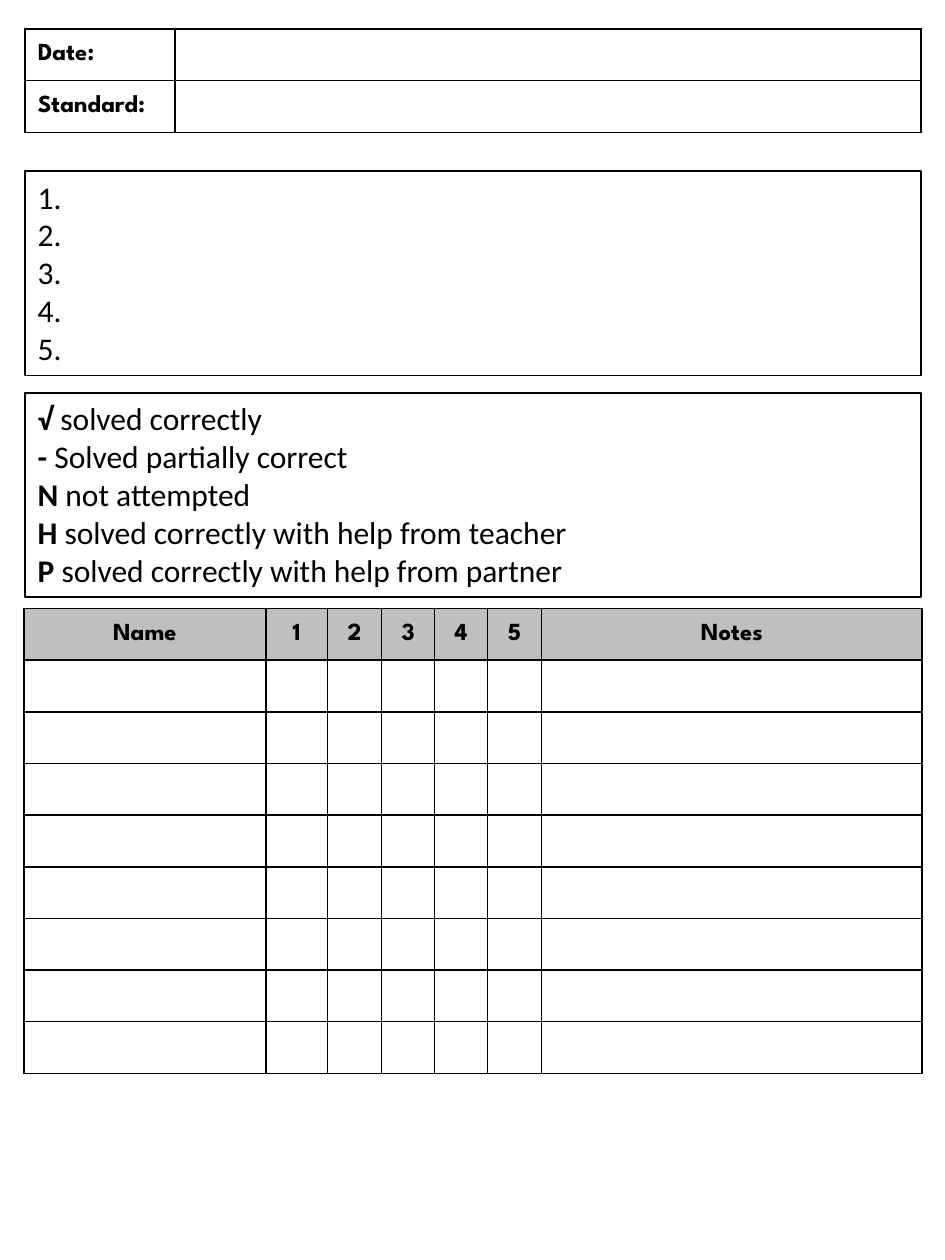
from lxml import etree
from pptx import Presentation
from pptx import util as u
from pptx.dml.color import RGBColor
from pptx.enum import shapes, text
from pptx.oxml import ns

BLACK, WHITE, GREY = "000000", "FFFFFF", "BFBFBF"
HEADING_FONT, BODY_FONT = "League Spartan", "Calibri"
LEFT, WIDTH = 0.2, 7.11
ROW_HEIGHT = 0.41


def color(value):
    return RGBColor.from_string(value)


def add_span(para, words, font, size, bold=False):
    span = para.add_run()
    span.text = words
    span.font.name = font
    span.font.size = u.Pt(size)
    span.font.bold = bold
    span.font.color.rgb = color(BLACK)


def add_borders(cell):
    properties = cell._tc.get_or_add_tcPr()
    for index, side in enumerate(("lnL", "lnR", "lnT", "lnB")):
        line = etree.Element(ns.qn(f"a:{side}"), w=str(u.Pt(1)))
        fill = etree.SubElement(line, ns.qn("a:solidFill"))
        etree.SubElement(fill, ns.qn("a:srgbClr"), val=BLACK)
        properties.insert(index, line)


def add_grid(page, left, top, widths, row_count):
    """Place a plain ruled table and return it."""
    frame = page.shapes.add_table(
        row_count, len(widths), u.Inches(left), u.Inches(top),
        u.Inches(sum(widths)), u.Inches(ROW_HEIGHT * row_count))
    table = frame.table
    table.first_row = table.horz_banding = False
    for column, width in zip(table.columns, widths):
        column.width = u.Inches(width)
    for row in table.rows:
        row.height = u.Inches(ROW_HEIGHT)
    for cell in table.iter_cells():
        cell.vertical_anchor = text.MSO_ANCHOR.MIDDLE
        cell.fill.background()
        add_borders(cell)
    return table


def fill_cell(cell, words, fill, align):
    cell.fill.solid()
    cell.fill.fore_color.rgb = color(fill)
    if words:
        para = cell.text_frame.paragraphs[0]
        para.alignment = align
        add_span(para, words, HEADING_FONT, 14, bold=True)


def add_lesson_table(page, left, top, width):
    label_width = 1.19
    labels = ["Date:", "Standard:"]
    table = add_grid(page, left, top, [label_width, width - label_width], len(labels))
    for row, label in enumerate(labels):
        for column, words in enumerate((label, "")):
            fill_cell(table.cell(row, column), words, WHITE, text.PP_ALIGN.LEFT)


def add_score_table(page, left, top, student_count):
    widths = [1.92, 0.49, 0.43, 0.42, 0.42, 0.43, 3.02]
    headings = ["Name", "1", "2", "3", "4", "5", "Notes"]
    table = add_grid(page, left, top, widths, student_count + 1)
    for column, heading in enumerate(headings):
        fill_cell(table.cell(0, column), heading, GREY, text.PP_ALIGN.CENTER)


def add_list_box(page, left, top, width, height, lines):
    """Place an outlined box; each line is a bold part and a regular part."""
    box = page.shapes.add_shape(
        shapes.MSO_SHAPE.RECTANGLE, u.Inches(left), u.Inches(top),
        u.Inches(width), u.Inches(height))
    box.shadow.inherit = False
    box.fill.background()
    box.line.color.rgb = color(BLACK)
    box.line.width = u.Pt(1)
    frame = box.text_frame
    frame.word_wrap = True
    frame.auto_size = text.MSO_AUTO_SIZE.SHAPE_TO_FIT_TEXT
    frame.vertical_anchor = text.MSO_ANCHOR.TOP
    for index, (symbol, meaning) in enumerate(lines):
        para = frame.add_paragraph() if index else frame.paragraphs[0]
        para.alignment = text.PP_ALIGN.LEFT
        if symbol:
            add_span(para, symbol, BODY_FONT, 18, bold=True)
        add_span(para, meaning, BODY_FONT, 18)


def main():
    deck = Presentation()
    deck.slide_width, deck.slide_height = u.Inches(7.5), u.Inches(10)
    page = deck.slides.add_slide(deck.slide_layouts[6])

    # Lesson details and student scores
    add_lesson_table(page, LEFT, 0.23, WIDTH)
    add_score_table(page, 0.19, 4.83, student_count=8)

    # Numbered problems
    problems = [("", f"{number}.") for number in range(1, 6)]
    add_list_box(page, LEFT, 1.36, WIDTH, 1.62, problems)

    # Key to the marks
    marks = [
        ("√", " solved correctly"),
        ("- ", "Solved partially correct"),
        ("N ", "not attempted"),
        ("H", " solved correctly with help from teacher"),
        ("P ", "solved correctly with help from partner"),
    ]
    add_list_box(page, LEFT, 3.12, WIDTH, 1.62, marks)

    deck.save("out.pptx")


if __name__ == "__main__":
    main()
